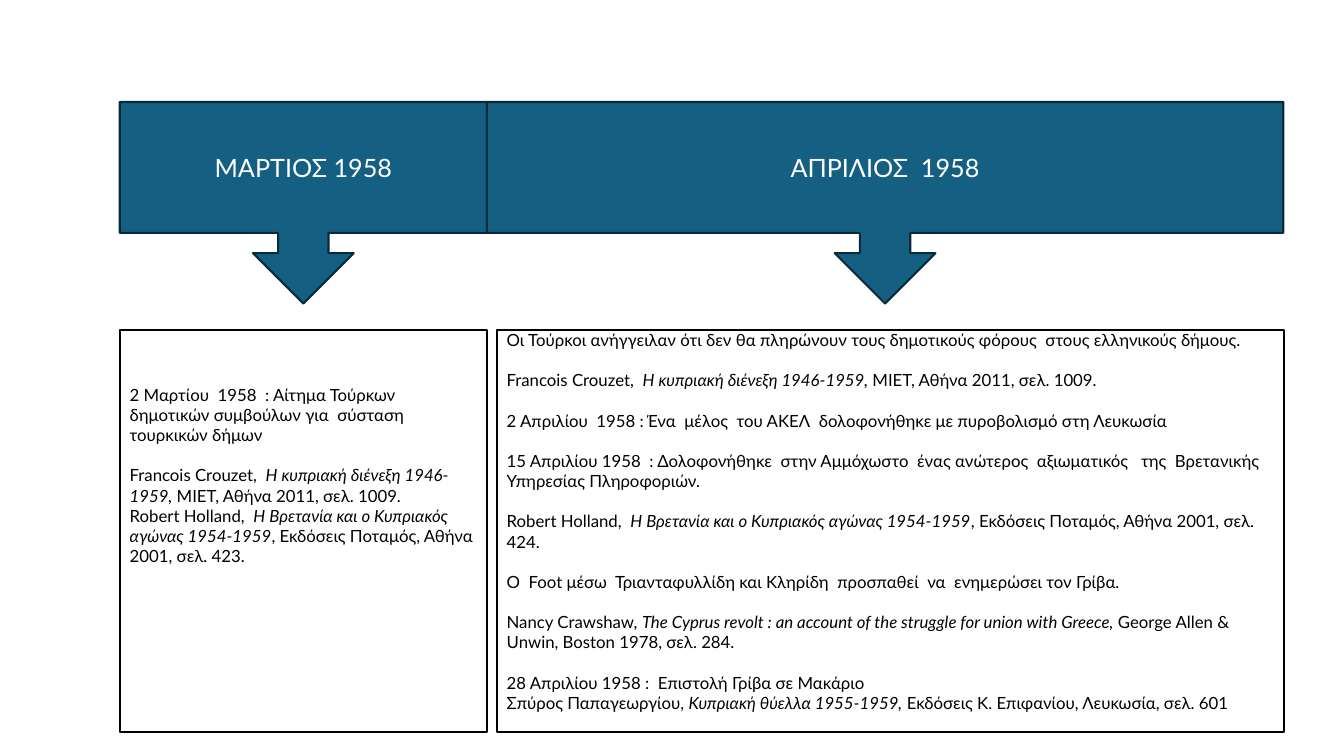
from pptx import Presentation
from pptx.dml.color import RGBColor
from pptx.enum.shapes import MSO_SHAPE
from pptx.enum.text import MSO_ANCHOR, PP_ALIGN
from pptx.util import Cm, Pt

COLORS = {"blue": "156082", "navy": "092A39", "white": "FFFFFF", "black": "000000"}

MONTHS = [
    {
        "title": "ΜΑΡΤΙΟΣ 1958",
        "head": (3.02, 9.25),
        "box": (3.02, 9.25),
        "inset": 1.38,
        "groups": [
            ["2 Μαρτίου  1958  : Αίτημα Τούρκων δημοτικών συμβούλων για  σύσταση τουρκικών δήμων"],
            [
                "Francois Crouzet,  *Η κυπριακή διένεξη 1946-1959,* ΜΙΕΤ, Αθήνα 2011, σελ. 1009.",
                "Robert Holland,  *Η Βρετανία και ο Κυπριακός αγώνας 1954-1959*, Εκδόσεις Ποταμός, Αθήνα 2001, σελ. 423.",
            ],
        ],
    },
    {
        "title": "ΑΠΡΙΛΙΟΣ  1958",
        "head": (12.27, 20.07),
        "box": (12.52, 19.83),
        "inset": 0,
        "groups": [
            ["Οι Τούρκοι ανήγγειλαν ότι δεν θα πληρώνουν τους δημοτικούς φόρους  στους ελληνικούς δήμους."],
            ["Francois Crouzet,  *Η κυπριακή διένεξη 1946-1959, *ΜΙΕΤ, Αθήνα 2011, σελ. 1009."],
            ["2 Απριλίου  1958 : Ένα  μέλος  του ΑΚΕΛ  δολοφονήθηκε με πυροβολισμό στη Λευκωσία"],
            ["15 Απριλίου 1958  : Δολοφονήθηκε  στην Αμμόχωστο  ένας ανώτερος  αξιωματικός   της  Βρετανικής Υπηρεσίας Πληροφοριών."],
            ["Robert Holland,  *Η Βρετανία και ο Κυπριακός αγώνας 1954-1959*, Εκδόσεις Ποταμός, Αθήνα 2001, σελ. 424."],
            ["Ο  Foot μέσω  Τριανταφυλλίδη και Κληρίδη  προσπαθεί  να  ενημερώσει τον Γρίβα."],
            ["Nancy Crawshaw, *The Cyprus revolt : an account of the struggle for union with Greece, *George Allen & Unwin, Boston 1978, σελ. 284."],
            [
                "28 Απριλίου 1958 :  Επιστολή Γρίβα σε Μακάριο",
                "Σπύρος Παπαγεωργίου, *Κυπριακή θύελλα 1955-1959,* Εκδόσεις Κ. Επιφανίου, Λευκωσία, σελ. 601",
            ],
        ],
    },
]


def add_block(kind, span, top, height, fill, line):
    left, width = span
    block = slide.shapes.add_shape(kind, Cm(left), Cm(top), Cm(width), Cm(height))
    block.shadow.inherit = False
    block.fill.solid()
    block.fill.fore_color.rgb = RGBColor.from_string(COLORS[fill])
    block.line.color.rgb = RGBColor.from_string(COLORS[line])
    block.line.width = Pt(1.5)
    block.text_frame.word_wrap = True
    return block.text_frame


def set_font(para, size, color, align):
    para.alignment = align
    para.font.name = "Lato"
    para.font.size = Pt(size)
    para.font.color.rgb = RGBColor.from_string(COLORS[color])


deck = Presentation()
deck.slide_width, deck.slide_height = Cm(33.87), Cm(19.05)
slide = deck.slides.add_slide(deck.slide_layouts[6])

for month in MONTHS:
    head = add_block(MSO_SHAPE.DOWN_ARROW_CALLOUT, month["head"], 2.57, 5.08, "blue", "navy")
    head.vertical_anchor = MSO_ANCHOR.MIDDLE
    head.text = month["title"]
    set_font(head.paragraphs[0], 18, "white", PP_ALIGN.CENTER)

    body = add_block(MSO_SHAPE.RECTANGLE, month["box"], 8.31, 10.13, "white", "black")
    body.vertical_anchor = MSO_ANCHOR.TOP
    body.margin_top = Cm(month["inset"])
    body.margin_bottom = 0
    for row, group in enumerate(month["groups"]):
        for item, text in enumerate(group):
            first = row == 0 and item == 0
            para = body.paragraphs[0] if first else body.add_paragraph()
            set_font(para, 12, "black", PP_ALIGN.LEFT)
            if row and item == 0:
                para.space_before = Pt(14.4)
            for part, words in enumerate(text.split("*")):
                run = para.add_run()
                run.text = words
                if part % 2:
                    run.font.italic = True

deck.save("out.pptx")
